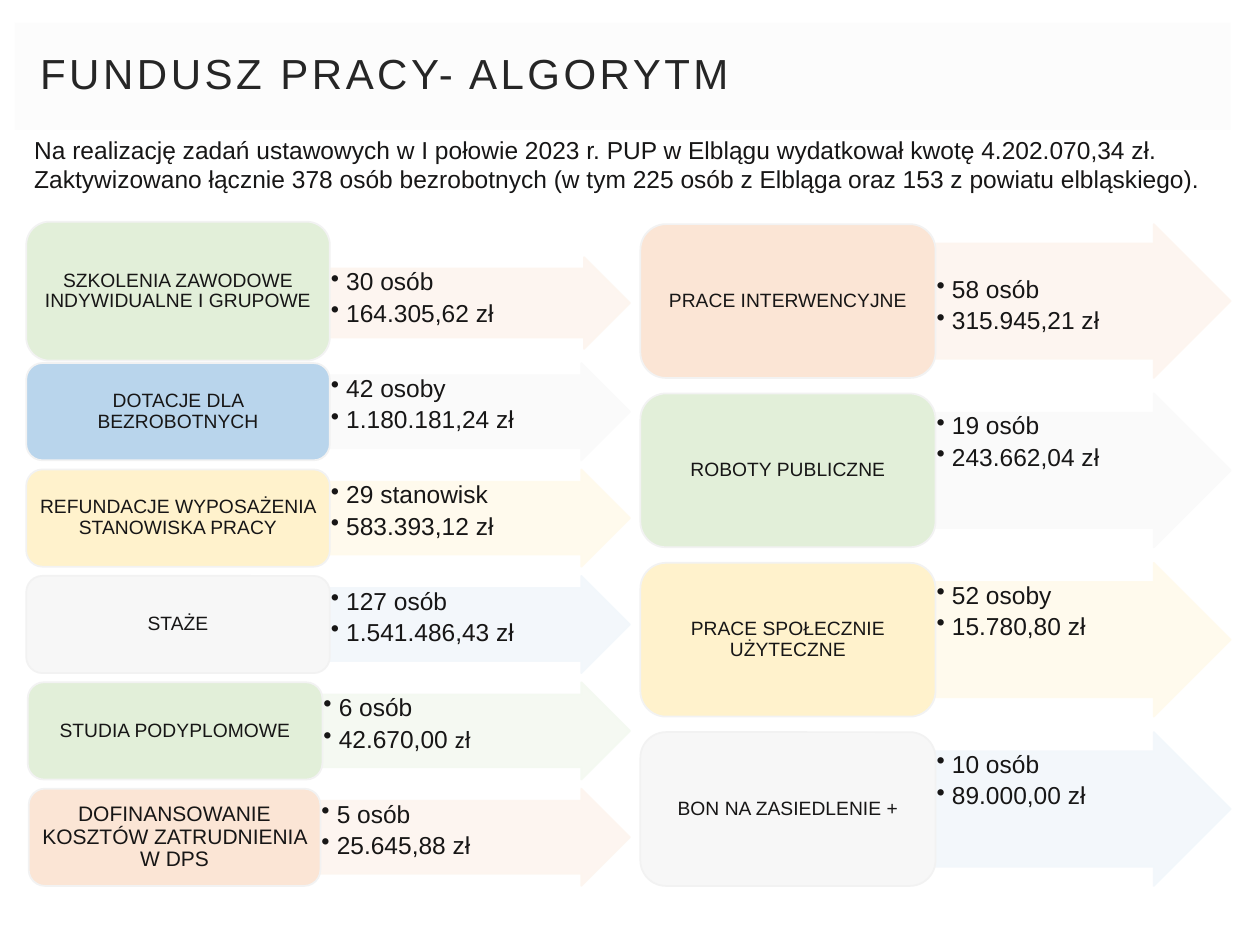
from dataclasses import dataclass

from lxml import etree
from pptx import Presentation
from pptx.dml.color import RGBColor
from pptx.enum.shapes import MSO_SHAPE
from pptx.enum.text import MSO_ANCHOR, PP_ALIGN
from pptx.oxml.ns import qn
from pptx.util import Cm, Pt

RECT, ROUND, ARROW = MSO_SHAPE.RECTANGLE, MSO_SHAPE.ROUNDED_RECTANGLE, MSO_SHAPE.RIGHT_ARROW
TOP, MIDDLE = MSO_ANCHOR.TOP, MSO_ANCHOR.MIDDLE
LEFT, CENTER = PP_ALIGN.LEFT, PP_ALIGN.CENTER


@dataclass(frozen=True)
class Theme:
    font: str = "Arial"
    alt: str = "Calibri"
    ink: str = "171616"
    head: str = "262626"
    band: str = "FCFCFC"
    edge: str = "F2F2F2"
    # Box colours
    green: str = "E2EFD9"
    blue: str = "B9D5EC"
    yellow: str = "FFF2CC"
    gray: str = "F7F7F7"
    peach: str = "FBE5D5"
    # Arrow colours
    rose: str = "FDF5EF"
    mist: str = "FAFAFA"
    cream: str = "FFFAEC"
    sky: str = "F2F7FB"
    mint: str = "F4F9F1"
    # Type sizes
    title: int = 24
    body: int = 14
    label: int = 11
    large: int = 12


T = Theme()


@dataclass(frozen=True)
class Row:
    label: str
    fill: str
    tint: str
    count: str
    sum: str
    unit: str = T.font
    size: int = T.label
    drop: float = 0


def set_frame(shape, inset, anchor):
    frame = shape.text_frame
    frame.word_wrap = True
    frame.vertical_anchor = anchor
    left, top, right, bottom = inset
    frame.margin_left, frame.margin_top = Cm(left), Cm(top)
    frame.margin_right, frame.margin_bottom = Cm(right), Cm(bottom)
    return frame


def add_par(frame, first, align=LEFT, space=0.9):
    par = frame.paragraphs[0] if first else frame.add_paragraph()
    par.alignment = align
    par.line_spacing = space
    return par


def add_run(par, text, size, color=T.ink, font=T.font):
    run = par.add_run()
    run.text = text
    run.font.size = Pt(size)
    run.font.name = font
    run.font.color.rgb = RGBColor.from_string(color)
    return run


def add_form(slide, kind, box, fill, edge=None):
    shape = slide.shapes.add_shape(kind, *map(Cm, box))
    shape.shadow.inherit = False
    shape.fill.solid()
    shape.fill.fore_color.rgb = RGBColor.from_string(fill)
    if edge:
        shape.line.color.rgb = RGBColor.from_string(edge)
        shape.line.width = Pt(1)
    else:
        shape.line.fill.background()
    return shape


def fade(shape, percent):
    """Make fill and line partly transparent."""
    for color in shape.element.spPr.iter(qn("a:srgbClr")):
        etree.SubElement(color, qn("a:alpha")).set("val", str(percent * 1000))


def add_bullet(par):
    props = par._p.get_or_add_pPr()
    props.set("marL", str(Cm(0.31)))
    props.set("indent", str(-Cm(0.31)))
    etree.SubElement(props, qn("a:buChar")).set("char", "•")


def add_title(slide, box, text):
    shape = add_form(slide, RECT, box, T.band)
    frame = set_frame(shape, (0.51,) * 4, MIDDLE)
    run = add_run(add_par(frame, True), text, T.title, T.head)
    run.font._element.set("spc", "200")


def add_intro(slide, box, lines):
    frame = set_frame(slide.shapes.add_textbox(*map(Cm, box)), (0.39, 0.13, 0.2, 0.13), TOP)
    for i, line in enumerate(lines):
        add_run(add_par(frame, i == 0, space=1.0), line, T.body)


def add_row(slide, box, arrow, row):
    # Arrow with the figures
    shape = add_form(slide, ARROW, arrow, row.tint, row.tint)
    shape.adjustments[0], shape.adjustments[1] = 0.75, 0.5
    fade(shape, 90)
    frame = set_frame(shape, (0.02, 0.02 + row.drop, 0.02, 0.02), TOP)
    if row.unit == T.font:
        money = [(row.sum + " zł", T.font)]
    else:
        money = [(row.sum + " ", T.font), ("zł", row.unit)]
    for i, runs in enumerate(([(row.count, T.font)], money)):
        par = add_par(frame, i == 0)
        par.space_after = Pt(2.8)
        add_bullet(par)
        for text, font in runs:
            add_run(par, text, T.body, font=font)

    # Box with the name
    shape = add_form(slide, ROUND, box, row.fill, T.edge)
    frame = set_frame(shape, (0.13, 0.05, 0.13, 0.05), MIDDLE)
    add_run(add_par(frame, True, CENTER), row.label, row.size)


def add_left(slide, box, rows):
    left, top, width, height = box
    pitch, high = 2.145, 1.96
    # Inset of the box and start of the arrow, row by row
    edges = [(0, 6.12)] * 4 + [(0.03, 5.97), (0.05, 5.93)]
    for i, (row, (inset, start)) in enumerate(zip(rows, edges)):
        y = top + height - high - (len(rows) - 1 - i) * pitch
        tall, head, deep = (top, y + 0.01, 1.85) if i == 0 else (y, y, high)
        body = 2.8 if i == 0 else high
        add_row(slide, (left + inset, tall, start - inset, body),
                (left + start, head, width - start, deep), row)


def add_right(slide, box, rows):
    left, top, width, height = box
    high, half = 3.1, width / 2
    pitch = (height - high) / (len(rows) - 1)
    for i, row in enumerate(rows):
        y = top + i * pitch
        add_row(slide, (left, y, half, high), (left + half, y, half, high), row)


LEFT_ROWS = [
    Row("SZKOLENIA ZAWODOWE INDYWIDUALNE I GRUPOWE", T.green, T.rose, "30 osób", "164.305,62"),
    Row("DOTACJE DLA BEZROBOTNYCH", T.blue, T.mist, "42 osoby", "1.180.181,24"),
    Row("REFUNDACJE WYPOSAŻENIA STANOWISKA PRACY", T.yellow, T.cream,
        "29 stanowisk", "583.393,12"),
    Row("STAŻE", T.gray, T.sky, "127 osób", "1.541.486,43"),
    Row("STUDIA PODYPLOMOWE", T.green, T.mint, "6 osób", "42.670,00", unit=T.alt),
    Row("DOFINANSOWANIE KOSZTÓW ZATRUDNIENIA W DPS", T.peach, T.rose,
        "5 osób", "25.645,88", size=T.large),
]
RIGHT_ROWS = [
    Row("PRACE INTERWENCYJNE", T.peach, T.rose, "58 osób", "315.945,21", drop=0.66),
    Row("ROBOTY PUBLICZNE", T.green, T.mist, "19 osób", "243.662,04"),
    Row("PRACE SPOŁECZNIE UŻYTECZNE", T.yellow, T.cream, "52 osoby", "15.780,80"),
    Row("BON NA ZASIEDLENIE +", T.gray, T.sky, "10 osób", "89.000,00"),
]
INTRO = [
    "Na realizację zadań ustawowych w I połowie 2023 r. PUP w Elblągu wydatkował kwotę "
    "4.202.070,34 zł.",
    "Zaktywizowano łącznie 378 osób bezrobotnych (w tym 225 osób z Elbląga oraz 153 z powiatu "
    "elbląskiego).",
]


def main():
    deck = Presentation()
    deck.slide_width, deck.slide_height = Cm(25.4), Cm(19.05)
    slide = deck.slides.add_slide(deck.slide_layouts[6])
    add_title(slide, (0.3, 0.46, 24.51, 2.16), "FUNDUSZ PRACY- ALGORYTM")
    add_left(slide, (0.53, 4.47, 12.17, 13.39), LEFT_ROWS)
    add_right(slide, (12.91, 4.52, 11.9, 13.34), RIGHT_ROWS)
    add_intro(slide, (0.3, 2.59, 24.18, 1.45), INTRO)
    deck.save("out.pptx")


if __name__ == "__main__":
    main()
